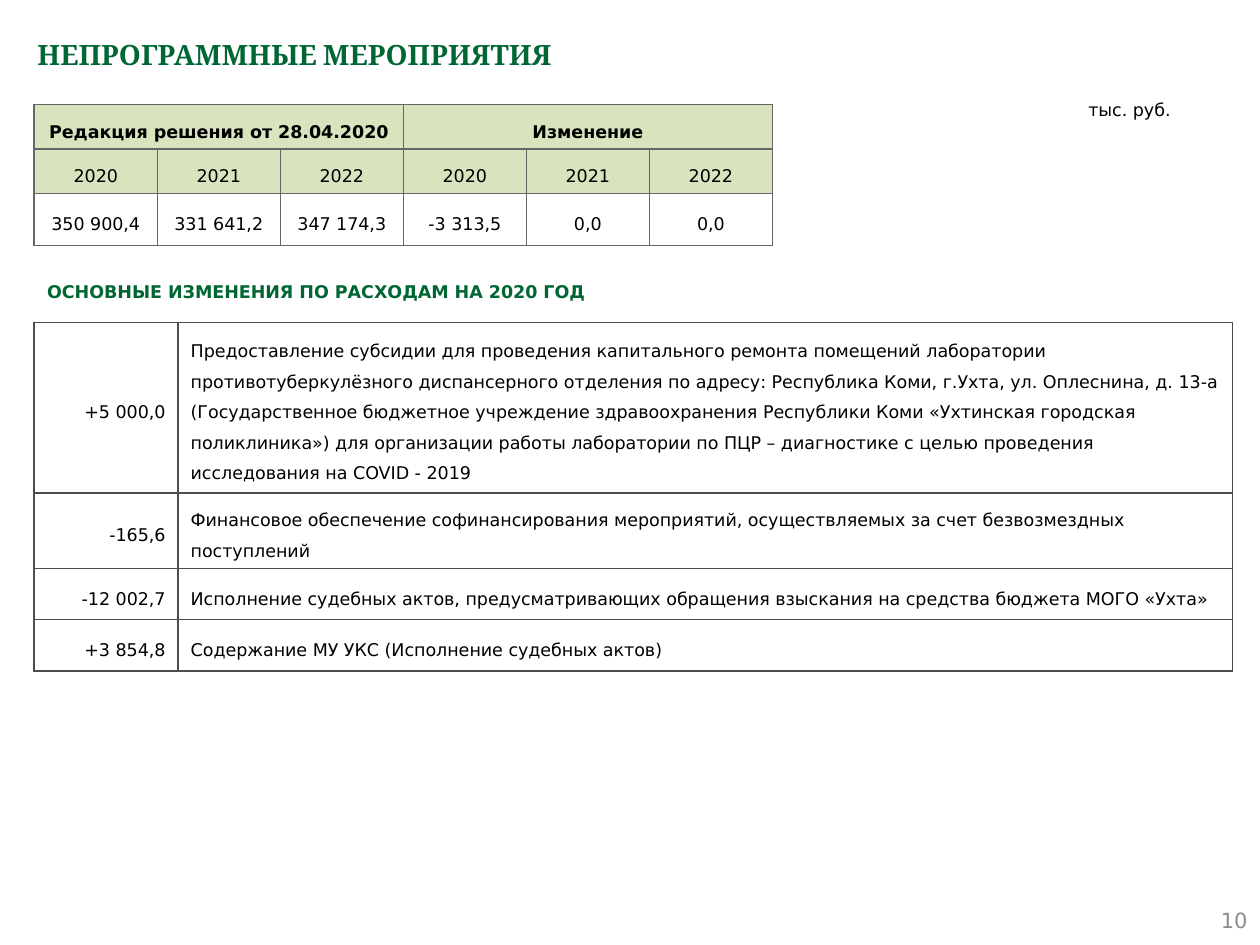
import lxml.etree
import pptx
import pptx.dml.color
import pptx.enum.shapes
import pptx.enum.text
import pptx.oxml.ns
import pptx.util

Cm = pptx.util.Cm
Pt = pptx.util.Pt
RGB = pptx.dml.color.RGBColor
ALIGN = pptx.enum.text.PP_ALIGN
ANCHOR = pptx.enum.text.MSO_ANCHOR

GREEN = RGB(0x00, 0x66, 0x33)
LIGHT = RGB(0xD7, 0xE4, 0xBD)
BLACK = RGB(0x00, 0x00, 0x00)
GRAY = RGB(0x8C, 0x8C, 0x8C)
EDGE = RGB(0x66, 0x66, 0x66)
DARK = RGB(0x4D, 0x4D, 0x4D)

SANS = "DejaVu Sans"

BUDGET = [
    ["Редакция решения от 28.04.2020", "", "", "Изменение", "", ""],
    ["2020", "2021", "2022"] * 2,
    ["350 900,4", "331 641,2", "347 174,3", "-3 313,5", "0,0", "0,0"],
]
CHANGES = [
    ["+5 000,0",
     "Предоставление субсидии для проведения капитального ремонта помещений "
     "лаборатории противотуберкулёзного диспансерного отделения по адресу: "
     "Республика Коми, г.Ухта, ул. Оплеснина, д. 13-а (Государственное бюджетное "
     "учреждение здравоохранения Республики Коми «Ухтинская городская поликлиника») "
     "для организации работы лаборатории по ПЦР – диагностике с целью проведения "
     "исследования на COVID - 2019"],
    ["-165,6",
     "Финансовое обеспечение софинансирования мероприятий, осуществляемых за счет "
     "безвозмездных поступлений"],
    ["-12 002,7",
     "Исполнение судебных актов, предусматривающих обращения взыскания на средства "
     "бюджета МОГО «Ухта»"],
    ["+3 854,8", "Содержание МУ УКС (Исполнение судебных актов)"],
]


def write(frame, text, size=10, color=BLACK, bold=False, font=SANS,
          align=ALIGN.LEFT, space=1.0, after=0):
    para = frame.paragraphs[0]
    para.alignment = align
    para.line_spacing = space
    para.space_before = Pt(0)
    para.space_after = Pt(after)
    run = para.add_run()
    run.text = text
    run.font.name = font
    run.font.size = Pt(size)
    run.font.bold = bold
    run.font.color.rgb = color


def add_title(slide, text):
    title = slide.shapes.title
    title.left, title.top = Cm(0.5), Cm(0.5)
    title.width, title.height = Cm(24.4), Cm(2)
    title.text_frame.vertical_anchor = ANCHOR.TOP
    write(title.text_frame, text, 16, GREEN, True, "Cambria", space=1.2)


def add_label(slide, box, text, anchor=ANCHOR.TOP, **style):
    frame = slide.shapes.add_textbox(*map(Cm, box)).text_frame
    frame.word_wrap = True
    frame.vertical_anchor = anchor
    write(frame, text, **style)


def add_heading(slide, box, text):
    kind = pptx.enum.shapes.MSO_SHAPE.PENTAGON
    shape = slide.shapes.add_shape(kind, *map(Cm, box))
    shape.adjustments[0] = 0
    shape.shadow.inherit = False
    shape.fill.background()
    shape.line.fill.background()
    shape.text_frame.vertical_anchor = ANCHOR.MIDDLE
    write(shape.text_frame, text, color=GREEN, bold=True)


def add_edges(cell, color):
    """Draw a 1 pt line on all four sides; call before the cell is filled."""
    qn = pptx.oxml.ns.qn
    props = cell._tc.get_or_add_tcPr()
    for side in ("a:lnL", "a:lnR", "a:lnT", "a:lnB"):
        line = lxml.etree.SubElement(props, qn(side), w=str(Pt(1)))
        fill = lxml.etree.SubElement(line, qn("a:solidFill"))
        lxml.etree.SubElement(fill, qn("a:srgbClr"), val=str(color))


def add_grid(slide, left, top, widths, heights, color):
    """Add a plain table with edges and no fill."""
    box = map(Cm, (left, top, sum(widths), sum(heights)))
    table = slide.shapes.add_table(len(heights), len(widths), *box).table
    table.first_row = table.horz_banding = False
    for col, width in zip(table.columns, widths):
        col.width = Cm(width)
    for row, height in zip(table.rows, heights):
        row.height = Cm(height)
    for cell in table.iter_cells():
        add_edges(cell, color)
        cell.fill.background()
        cell.vertical_anchor = ANCHOR.MIDDLE
    return table


def add_budget(slide):
    table = add_grid(slide, 0.69, 2.11, [2.48] * 6, [0.89, 0.89, 1.04], EDGE)
    for first in (0, 3):
        table.cell(0, first).merge(table.cell(0, first + 2))
    for r, row in enumerate(BUDGET):
        for c, text in enumerate(row):
            cell = table.cell(r, c)
            cell.margin_left = cell.margin_right = Cm(0.13)
            cell.margin_top = cell.margin_bottom = Cm(0.13)
            if r < 2:
                cell.fill.solid()
                cell.fill.fore_color.rgb = LIGHT
            if text:
                write(cell.text_frame, text, bold=r == 0,
                      align=ALIGN.CENTER, space=1.5)


def add_changes(slide):
    table = add_grid(slide, 0.69, 6.5, [2.9, 21.26], [3.33, 1.49, 1.03, 1.03], DARK)
    for r, row in enumerate(CHANGES):
        for c, text in enumerate(row):
            align = ALIGN.LEFT if c else ALIGN.RIGHT
            write(table.cell(r, c).text_frame, text, align=align, space=1.5, after=10)


def main():
    deck = pptx.Presentation()
    deck.slide_width, deck.slide_height = Cm(25.4), Cm(19.05)
    slide = deck.slides.add_slide(deck.slide_layouts[5])
    add_title(slide, "НЕПРОГРАММНЫЕ МЕРОПРИЯТИЯ")
    add_label(slide, (19.48, 18.03, 5.92, 1.02), "10", ANCHOR.MIDDLE,
              size=12, color=GRAY, align=ALIGN.RIGHT)
    add_changes(slide)
    add_label(slide, (21.69, 1.78, 2.57, 0.76), "тыс. руб.", space=1.2)
    add_heading(slide, (0.7, 5.33, 12.5, 1.1),
                "ОСНОВНЫЕ ИЗМЕНЕНИЯ ПО РАСХОДАМ НА 2020 ГОД")
    add_budget(slide)
    deck.save("out.pptx")


if __name__ == "__main__":
    main()
